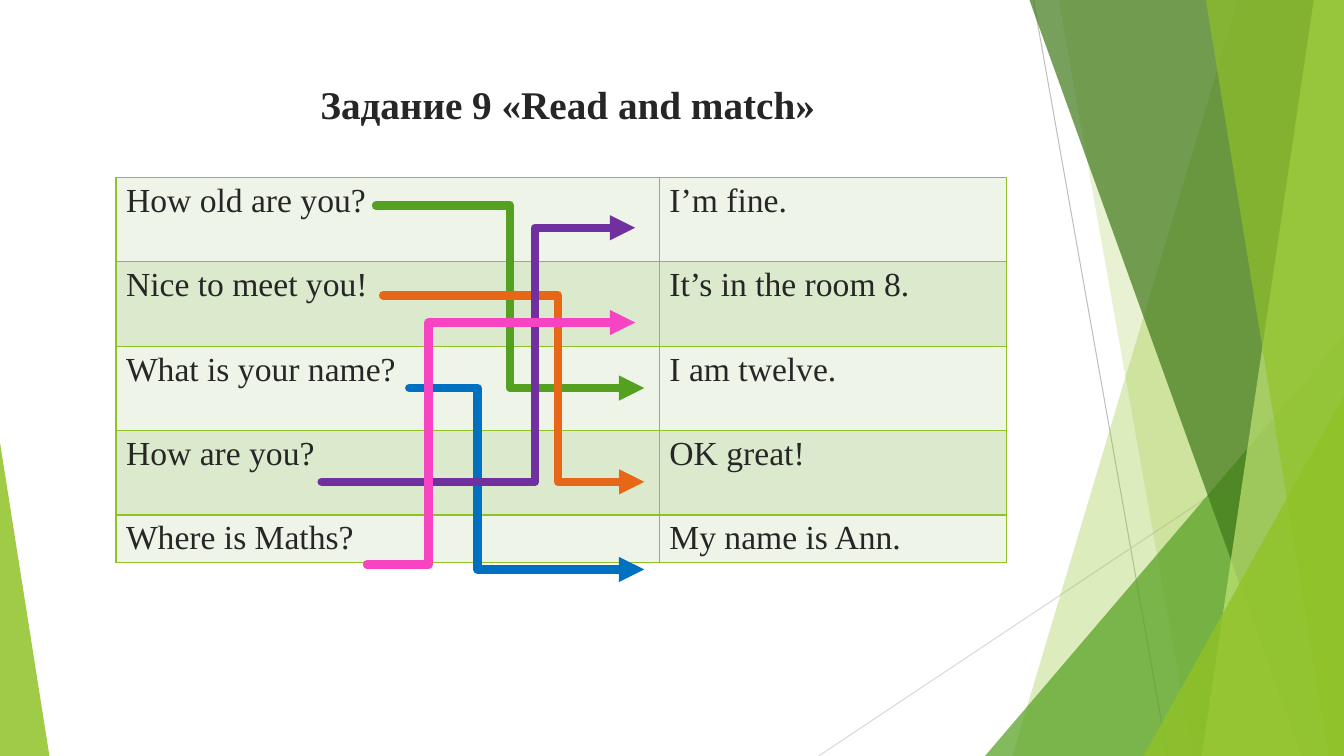
import collections

import pptx
import pptx.dml.color
import pptx.enum.shapes
import pptx.enum.text
import pptx.oxml
import pptx.oxml.ns
import pptx.util

Inches = pptx.util.Inches
Pt = pptx.util.Pt
qn = pptx.oxml.ns.qn
SHAPES = pptx.enum.shapes.MSO_SHAPE
CONNECTORS = pptx.enum.shapes.MSO_CONNECTOR
ANCHORS = pptx.enum.text.MSO_ANCHOR

Box = collections.namedtuple("Box", "left top width height")
FONT = "Times New Roman"
INK = "262626"
LIME = "90C226"

PANELS = [
    ("band", 1.05, 3.29, LIME, 30),
    ("band", 2.83, 1.5, LIME, 20),
    ("corner", 3.56, 4.17, "54A021", 72),
    ("band", 3.12, 0.42, "3F7819", 70),
    ("band", 0.3, 1.41, "C0E474", 70),
    ("band", 1.37, 0.15, LIME, 65),
    ("corner", 1.99, 3.57, LIME, 80),
]
PHRASES = [
    ("How old are you?", "I’m fine."),
    ("Nice to meet you!", "It’s in the room 8."),
    ("What is your name?", "I am twelve."),
    ("How are you?", "OK great!"),
    ("Where is Maths?", "My name is Ann."),
]
MATCHES = [
    ((2.58, 0.28), (5.24, 2.09), 0.5, "54A021"),
    ((2.65, 1.17), (5.24, 3.02), 0.67, "E76618"),
    ((2.91, 2.09), (5.24, 3.89), 0.29, "0070C0"),
    ((2.04, 3.02), (5.15, 0.5), 0.68, "7030A0"),
    ((2.49, 3.84), (5.15, 1.44), 0.23, "F644C3"),
]


def rgb(value):
    return pptx.dml.color.RGBColor.from_string(value)


def add_xml(parent, tag, **attributes):
    child = parent.makeelement(qn(tag), attributes)
    parent.append(child)
    return child


def paint(shape, color, opacity):
    shape.shadow.inherit = False
    shape.line.fill.background()
    shape.fill.solid()
    shape.fill.fore_color.rgb = rgb(color)
    tint = shape.element.find(".//" + qn("a:srgbClr"))
    add_xml(tint, "a:alpha", val=str(opacity * 1000))


def add_line(slide, kind, start, end, color, width):
    points = [Inches(value) for value in (*start, *end)]
    line = slide.shapes.add_connector(kind, *points)
    line.line.color.rgb = rgb(color)
    line.line.width = Pt(width)
    add_xml(line.element.spPr, "a:effectLst")
    return line


def add_triangle(slide, box, apex, color, opacity):
    triangle = slide.shapes.add_shape(
        SHAPES.ISOSCELES_TRIANGLE, *(Inches(value) for value in box))
    triangle.adjustments[0] = apex
    paint(triangle, color, opacity)


def add_band(slide, box, top_reach, bottom_reach, color, opacity):
    right, bottom = box.left + box.width, box.top + box.height
    corners = [(right - top_reach, box.top), (right, box.top),
               (right, bottom), (right - bottom_reach, bottom)]
    points = [(Inches(x), Inches(y)) for x, y in corners]
    builder = slide.shapes.build_freeform(*points[0])
    builder.add_line_segments(points[1:])
    paint(builder.convert_to_shape(), color, opacity)


def add_backdrop(slide, box):
    right, bottom = box.left + box.width, box.top + box.height
    add_line(slide, CONNECTORS.STRAIGHT, (right - 3.08, box.top),
             (right - 1.75, bottom), "BFBFBF", 0.75)
    add_line(slide, CONNECTORS.STRAIGHT, (right, bottom - 3.47),
             (right - 5.21, bottom), "D9D9D9", 0.75)
    for kind, first, second, color, opacity in PANELS:
        if kind == "band":
            add_band(slide, box, first, second, color, opacity)
        else:
            corner = Box(right - first, bottom - second, first, second)
            add_triangle(slide, corner, 1, color, opacity)
    add_triangle(slide, Box(box.left, bottom - 3.11, 0.49, 3.11), 0, LIME, 85)


def add_title(slide, box):
    title = slide.shapes.title
    title.left, title.top, title.width, title.height = map(Inches, box)
    frame = title.text_frame
    frame.text = "Задание 9 «Read and match»"
    frame.vertical_anchor = ANCHORS.MIDDLE
    frame.margin_top, frame.margin_bottom = Inches(0.17), Inches(0.05)
    heading = frame.paragraphs[0]
    heading.alignment = pptx.enum.text.PP_ALIGN.CENTER
    heading.font.name = FONT
    heading.font.size = Pt(28)
    heading.font.bold = True
    heading.font.color.rgb = rgb(INK)


def format_cell(cell, text, color):
    cell.text = text
    phrase = cell.text_frame.paragraphs[0]
    phrase.font.name = FONT
    phrase.font.size = Pt(24)
    phrase.font.color.rgb = rgb(INK)
    properties = cell._tc.get_or_add_tcPr()
    for side in ("a:lnL", "a:lnR", "a:lnT", "a:lnB"):
        border = add_xml(properties, side, w=str(Pt(1)))
        add_xml(add_xml(border, "a:solidFill"), "a:srgbClr", val=LIME)
    cell.fill.solid()
    cell.fill.fore_color.rgb = rgb(color)


def add_phrases(slide, box):
    frame = slide.shapes.add_table(len(PHRASES), 2, *map(Inches, box))
    table = frame.table
    table.first_row = table.horz_banding = False
    question_width, last_height = 5.39, 0.47
    row_height = (box.height - last_height) / (len(PHRASES) - 1)
    table.columns[0].width = Inches(question_width)
    table.columns[1].width = Inches(box.width - question_width)
    for row, phrases in enumerate(PHRASES):
        is_last = row == len(PHRASES) - 1
        table.rows[row].height = Inches(last_height if is_last else row_height)
        for column, text in enumerate(phrases):
            format_cell(table.cell(row, column), text,
                        "DBE9CD" if row % 2 else "EEF4E8")


def add_matches(slide, box):
    for start, end, bend, color in MATCHES:
        begin, finish = ((box.left + x, box.top + y) for x, y in (start, end))
        arrow = add_line(slide, CONNECTORS.ELBOW, begin, finish, color, 6)
        guides = arrow.element.find(".//" + qn("a:avLst"))
        add_xml(guides, "a:gd", name="adj1", fmla=f"val {round(bend * 100000)}")
        stroke = arrow.element.find(".//" + qn("a:ln"))
        stroke.set("cap", "rnd")
        add_xml(stroke, "a:round")
        add_xml(stroke, "a:tailEnd", type="triangle")


def main():
    deck = pptx.Presentation()
    deck.slide_width, deck.slide_height = Inches(13.33), Inches(7.5)
    slide = deck.slides.add_slide(deck.slide_layouts[5])
    table_box = Box(1.15, 1.76, 8.83, 3.82)
    add_backdrop(slide, Box(0, 0, 13.33, 7.5))
    add_title(slide, Box(0.93, 0.25, 9.4, 1.44))
    add_phrases(slide, table_box)
    add_matches(slide, table_box)
    deck.save("out.pptx")


if __name__ == "__main__":
    main()
